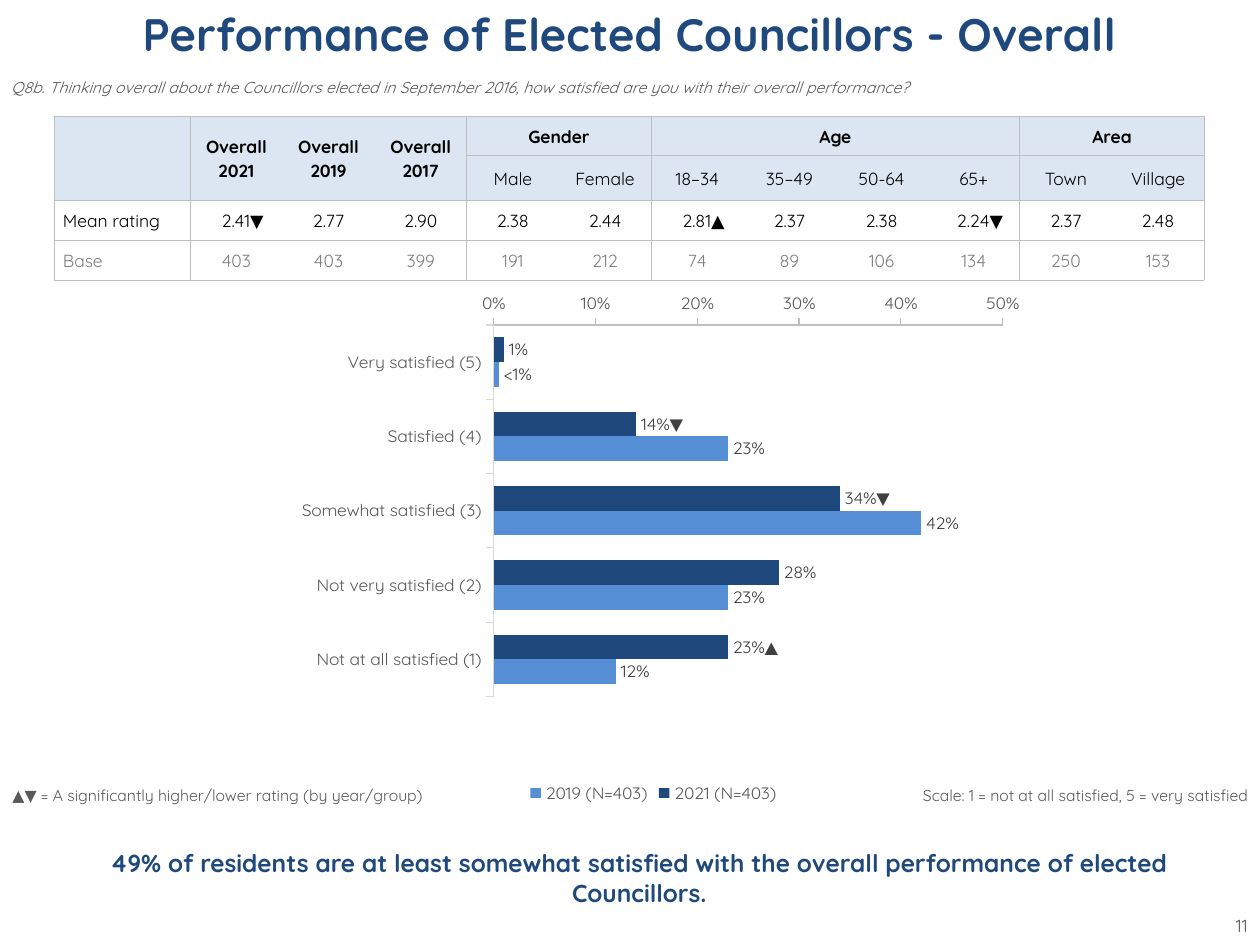
from lxml.etree import SubElement
from pptx import Presentation
from pptx.chart.data import CategoryChartData
from pptx.dml.color import RGBColor
from pptx.enum.chart import (XL_AXIS_CROSSES, XL_CHART_TYPE, XL_LABEL_POSITION,
                             XL_LEGEND_POSITION, XL_TICK_MARK)
from pptx.enum.text import MSO_ANCHOR, MSO_AUTO_SIZE, PP_ALIGN
from pptx.oxml import parse_xml
from pptx.oxml.ns import nsdecls, qn
from pptx.util import Inches, Pt

FONT = "Quicksand"
NAVY = RGBColor(0x1F, 0x49, 0x7D)
BLUE = RGBColor(0x55, 0x8E, 0xD5)
PALE_BLUE = RGBColor(0xDC, 0xE6, 0xF2)
BLACK = RGBColor(0x00, 0x00, 0x00)
DARK_GREY = RGBColor(0x40, 0x40, 0x40)
TEXT_GREY = RGBColor(0x59, 0x59, 0x59)
BASE_GREY = RGBColor(0x80, 0x80, 0x80)
LINE_GREY = RGBColor(0xBF, 0xBF, 0xBF)
AXIS_GREY = RGBColor(0xD9, 0xD9, 0xD9)

TABLE_ROWS = [
    ["", "Overall 2021", "Overall 2019", "Overall 2017",
     "Gender", "", "Age", "", "", "", "Area", ""],
    ["", "", "", "", "Male", "Female", "18–34", "35–49", "50-64", "65+", "Town", "Village"],
    ["Mean rating", "2.41▼", "2.77", "2.90", "2.38", "2.44",
     "2.81▲", "2.37", "2.38", "2.24▼", "2.37", "2.48"],
    ["Base", "403", "403", "399", "191", "212", "74", "89", "106", "134", "250", "153"],
]
HEADER_ROWS = 2
TALL_HEADERS = range(4)
WIDE_HEADERS = [(4, 5), (6, 9), (10, 11)]
GROUP_EDGES = {0, 1, 4, 6, 10, 12}

CATEGORIES = ["Very satisfied (5)", "Satisfied (4)", "Somewhat satisfied (3)",
              "Not very satisfied (2)", "Not at all satisfied (1)"]
# name, values, colour, labels that differ from the value
SERIES = [
    ("2021 (N=403)", [0.01, 0.14, 0.34, 0.28, 0.23], NAVY,
     {1: "14%▼", 2: "34%▼", 4: "23%▲"}),
    ("2019 (N=403)", [0.005, 0.23, 0.42, 0.23, 0.12], BLUE, {0: "<1%"}),
]


def set_font(font, size, color, bold=False, italic=False):
    font.name = FONT
    font.size = Pt(size)
    font.bold = bold
    font.italic = italic
    font.color.rgb = color


def write(text_frame, text, size, color, align=PP_ALIGN.LEFT, **style):
    paragraph = text_frame.paragraphs[0]
    paragraph.alignment = align
    run = paragraph.add_run()
    run.text = text
    set_font(run.font, size, color, **style)
    return paragraph


def add_text(slide, box, text, size, color, align=PP_ALIGN.LEFT,
             anchor=MSO_ANCHOR.TOP, **style):
    shape = slide.shapes.add_textbox(*map(Inches, box))
    text_frame = shape.text_frame
    text_frame.word_wrap = True
    text_frame.vertical_anchor = anchor
    write(text_frame, text, size, color, align, **style)
    return shape


def add_note(slide, box, text, size, align):
    """Small grey text whose box fits its text."""
    shape = add_text(slide, box, text, size, TEXT_GREY, align)
    shape.text_frame.auto_size = MSO_AUTO_SIZE.SHAPE_TO_FIT_TEXT


def add_title(slide, text):
    title = slide.shapes.title
    title.left, title.top, title.width, title.height = map(Inches, (0, 0, 10, 0.55))
    title.text_frame.auto_size = MSO_AUTO_SIZE.NONE
    title.text_frame.vertical_anchor = MSO_ANCHOR.TOP
    write(title.text_frame, text, 26, NAVY, PP_ALIGN.CENTER, bold=True)


def set_borders(cell, visible_sides):
    properties = cell._tc.get_or_add_tcPr()
    for side in "LRTB":
        line = SubElement(properties, qn(f"a:ln{side}"), w=str(Pt(0.5)))
        if side in visible_sides:
            fill = SubElement(line, qn("a:solidFill"))
            SubElement(fill, qn("a:srgbClr"), val=str(LINE_GREY))
        else:
            SubElement(line, qn("a:noFill"))


def cell_sides(cell, row, column):
    """Rules run between all rows, but only at the edges of column groups."""
    sides = "B" if row == 1 and cell.is_spanned else "TB"
    if column in GROUP_EDGES:
        sides += "L"
    if column + cell.span_width in GROUP_EDGES:
        sides += "R"
    return sides


def format_cell(cell, row, column, text):
    is_header = row < HEADER_ROWS
    is_number = not is_header and column > 0
    set_borders(cell, cell_sides(cell, row, column))
    if is_header:
        cell.fill.solid()
        cell.fill.fore_color.rgb = PALE_BLUE
    else:
        cell.fill.background()
    cell.vertical_anchor = MSO_ANCHOR.MIDDLE
    cell.margin_left = cell.margin_right = Inches(0.01 if is_number else 0.07)
    cell.margin_top = Inches(0.01 if is_number else 0)
    cell.margin_bottom = 0
    if not text:
        return
    paragraph = write(cell.text_frame, text, 10, BASE_GREY if row == 3 else BLACK,
                      PP_ALIGN.CENTER if column else PP_ALIGN.LEFT, bold=row == 0)
    if not is_number:
        paragraph.line_spacing = 1.07
    elif text[-1] in "▲▼":
        paragraph._p.get_or_add_pPr().set("indent", str(Inches(0.1)))


def add_ratings_table(slide):
    left, top, width, height, label_width = 0.43, 0.92, 9.13, 1.26, 1.08
    row_count, column_count = len(TABLE_ROWS), len(TABLE_ROWS[0])
    table = slide.shapes.add_table(row_count, column_count,
                                   *map(Inches, (left, top, width, height))).table
    table.first_row = table.horz_banding = False
    for column, table_column in enumerate(table.columns):
        share = (width - label_width) / (column_count - 1)
        table_column.width = Inches(share if column else label_width)
    for column in TALL_HEADERS:
        table.cell(0, column).merge(table.cell(1, column))
    for first, last in WIDE_HEADERS:
        table.cell(0, first).merge(table.cell(0, last))
    for row, texts in enumerate(TABLE_ROWS):
        for column, text in enumerate(texts):
            format_cell(table.cell(row, column), row, column, text)


def format_axis(axis, line_color):
    axis.has_major_gridlines = False
    axis.major_tick_mark = XL_TICK_MARK.OUTSIDE
    axis.minor_tick_mark = XL_TICK_MARK.NONE
    axis.format.line.color.rgb = line_color
    axis.format.line.width = Pt(0.75)
    set_font(axis.tick_labels.font, 10, TEXT_GREY)


def format_series(series, color, special_labels):
    series.format.fill.solid()
    series.format.fill.fore_color.rgb = color
    labels = series.data_labels
    labels.show_value = True
    labels.number_format = "0%"
    labels.number_format_is_linked = False
    labels.position = XL_LABEL_POSITION.OUTSIDE_END
    set_font(labels.font, 10, DARK_GREY)
    for index, text in special_labels.items():
        label = series.points[index].data_label
        write(label.text_frame, text, 10, DARK_GREY, PP_ALIGN.CENTER)
        label.position = XL_LABEL_POSITION.OUTSIDE_END


def place_plot(chart, x, y, w, h):
    plot_area = chart.element.find(".//" + qn("c:plotArea"))
    for layout in plot_area.findall(qn("c:layout")):
        plot_area.remove(layout)
    values = {"layoutTarget": "inner", "xMode": "edge", "yMode": "edge",
              "x": x, "y": y, "w": w, "h": h}
    items = "".join(f'<c:{name} val="{value}"/>' for name, value in values.items())
    plot_area.insert(0, parse_xml(f'<c:layout {nsdecls("c")}><c:manualLayout>{items}'
                                  '</c:manualLayout></c:layout>'))


def add_satisfaction_chart(slide):
    data = CategoryChartData(number_format="0%")
    data.categories = CATEGORIES
    for name, values, _, _ in SERIES:
        data.add_series(name, values)
    chart = slide.shapes.add_chart(XL_CHART_TYPE.BAR_CLUSTERED,
                                   *map(Inches, (2.17, 2.33, 6.03, 4.08)), data).chart
    chart.has_title = False
    set_font(chart.font, 10, TEXT_GREY)
    plot = chart.plots[0]
    plot.gap_width, plot.overlap, plot.vary_by_categories = 100, 0, False
    for series, (_, _, color, special_labels) in zip(plot.series, SERIES):
        format_series(series, color, special_labels)
    format_axis(chart.category_axis, AXIS_GREY)
    chart.category_axis.reverse_order = True
    chart.category_axis.crosses = XL_AXIS_CROSSES.MAXIMUM
    value_axis = chart.value_axis
    format_axis(value_axis, LINE_GREY)
    value_axis.minimum_scale, value_axis.maximum_scale, value_axis.major_unit = 0, 0.5, 0.1
    value_axis.tick_labels.number_format = "0%"
    value_axis.tick_labels.number_format_is_linked = False
    chart.has_legend = True
    chart.legend.position = XL_LEGEND_POSITION.BOTTOM
    chart.legend.include_in_layout = False
    set_font(chart.legend.font, 10, TEXT_GREY)
    place_plot(chart, 0.29, 0, 0.67, 0.77)


def main():
    presentation = Presentation()
    presentation.slide_width, presentation.slide_height = Inches(10), Inches(7.5)
    slide = presentation.slides.add_slide(presentation.slide_layouts[5])
    add_title(slide, "Performance of Elected Councillors - Overall")
    add_text(slide, (-0.01, 0.57, 10, 0.24),
             "Q8b. Thinking overall about the Councillors elected in September 2016, "
             "how satisfied are you with their overall performance?",
             9, TEXT_GREY, anchor=MSO_ANCHOR.MIDDLE, italic=True)
    add_ratings_table(slide)
    add_satisfaction_chart(slide)
    add_note(slide, (0, 6.19, 3.9, 0.25),
             "▲▼ = A significantly higher/lower rating (by year/group)", 9, PP_ALIGN.LEFT)
    add_note(slide, (6.97, 6.19, 3.03, 0.25),
             "Scale: 1 = not at all satisfied, 5 = very satisfied", 9, PP_ALIGN.RIGHT)
    add_text(slide, (0.51, 6.43, 9.13, 1.07),
             "49% of residents are at least somewhat satisfied with the overall "
             "performance of elected Councillors.",
             14, NAVY, PP_ALIGN.CENTER, MSO_ANCHOR.MIDDLE, bold=True)
    add_note(slide, (9.57, 7.21, 0.43, 0.27), "11", 10, PP_ALIGN.RIGHT)
    presentation.save("out.pptx")


if __name__ == "__main__":
    main()
